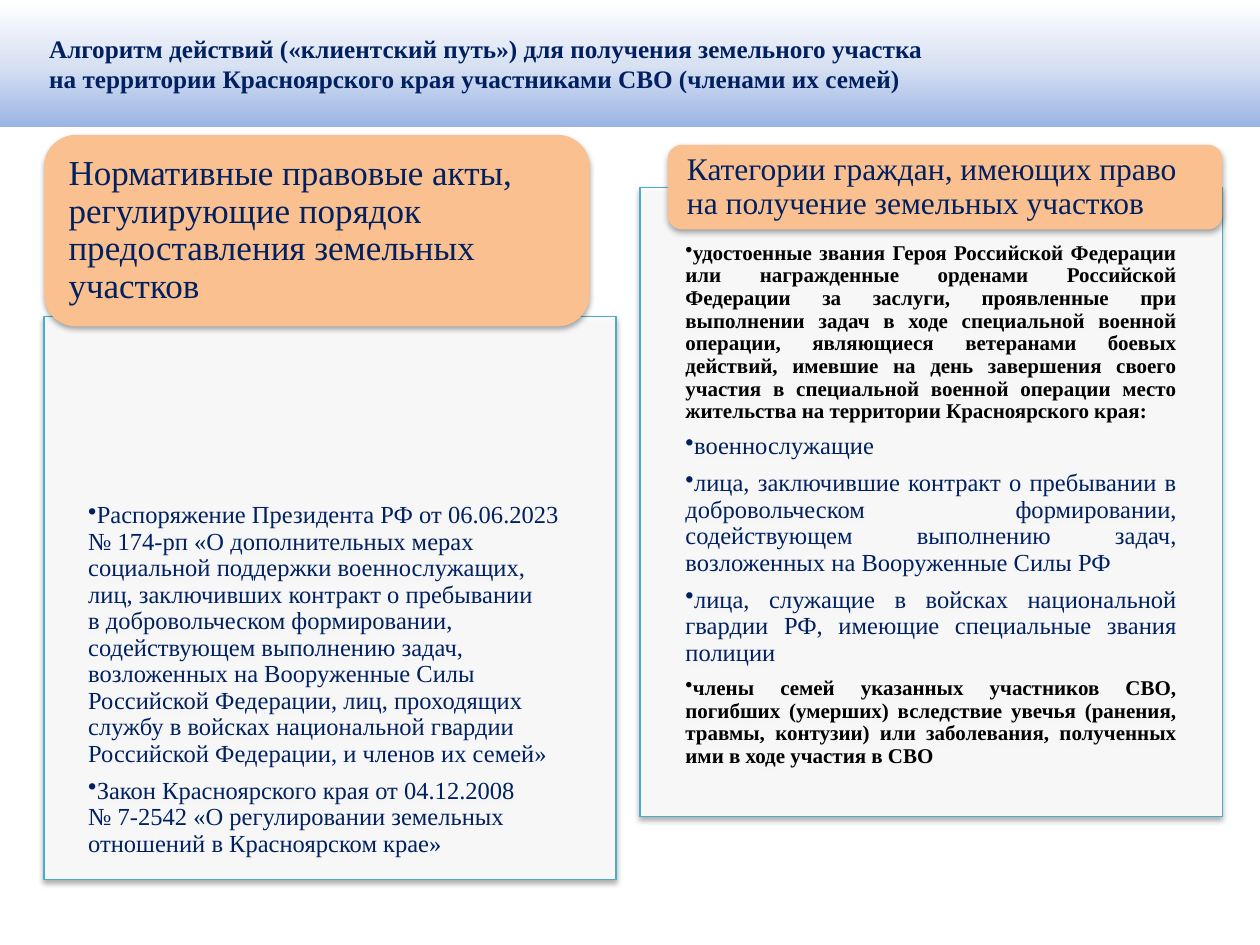
from copy import deepcopy

from lxml.etree import SubElement
from pptx import Presentation
from pptx.dml.color import RGBColor
from pptx.enum.shapes import MSO_SHAPE
from pptx.enum.text import MSO_ANCHOR, PP_ALIGN
from pptx.oxml.ns import qn
from pptx.util import Inches, Pt

THEME = {
    "font": "Times New Roman",
    "navy": "002060",
    "black": "000000",
    "panel": "FFFFFF",
    "panel_line": "4BACC6",
    "heading": "FAC090",
    "banner": [(0, "9AB5E4"), (0.5, "D9E2F3"), (1, "FFFFFF")],
    "title_size": 14.4,
    "item_size": 14,
    "summary_size": 12,
}

TITLE = (
    "Алгоритм действий («клиентский путь») для получения земельного участка\v"
    "на территории Красноярского края участниками СВО (членами их семей)"
)

SECTIONS = [
    {
        "heading": "Категории граждан, имеющих право на получение земельных участков",
        "heading_box": (5.3, 1.15, 4.4, 0.67),
        "heading_size": 18,
        "panel_box": (5.08, 1.49, 4.62, 4.99),
        "insets": (0.36, 0.43, 0.36, 0.09),
        "align": PP_ALIGN.JUSTIFY,
        "items": [
            ("summary", "удостоенные звания Героя Российской Федерации или награжденные "
             "орденами Российской Федерации за заслуги, проявленные при выполнении задач "
             "в ходе специальной военной операции, являющиеся ветеранами боевых действий, "
             "имевшие на день завершения своего участия в специальной военной операции "
             "место жительства на территории Красноярского края:"),
            ("item", "военнослужащие"),
            ("item", "лица, заключившие контракт о пребывании в добровольческом "
             "формировании, содействующем выполнению задач, возложенных на "
             "Вооруженные Силы РФ"),
            ("item", "лица, служащие в войсках национальной гвардии РФ, имеющие "
             "специальные звания полиции"),
            ("summary", "члены семей указанных участников СВО, погибших (умерших) "
             "вследствие увечья (ранения, травмы, контузии) или заболевания, "
             "полученных ими в ходе участия в СВО"),
        ],
    },
    {
        "heading": "Нормативные правовые акты, регулирующие порядок предоставления "
                   "земельных участков",
        "heading_box": (0.35, 1.07, 4.33, 1.52),
        "heading_size": 20,
        "panel_box": (0.35, 2.51, 4.54, 4.47),
        "insets": (0.35, 1.48, 0.35, 0.11),
        "align": PP_ALIGN.LEFT,
        "items": [
            ("item", "Распоряжение Президента РФ от 06.06.2023 № 174-рп "
             "«О дополнительных мерах социальной поддержки военнослужащих, лиц, "
             "заключивших контракт о пребывании\vв добровольческом формировании, "
             "содействующем выполнению задач, возложенных на Вооруженные Силы "
             "Российской Федерации, лиц, проходящих службу в войсках национальной "
             "гвардии Российской Федерации, и членов их семей»"),
            ("item", "Закон Красноярского края от 04.12.2008\v№ 7-2542 "
             "«О регулировании земельных отношений в Красноярском крае»"),
        ],
    },
]


def add_block(slide, preset, box, insets, anchor):
    block = slide.shapes.add_shape(preset, *map(Inches, box))
    block.shadow.inherit = False
    block.line.fill.background()
    frame = block.text_frame
    frame.word_wrap = True
    frame.vertical_anchor = anchor
    frame.margin_left, frame.margin_top, frame.margin_right, frame.margin_bottom = map(
        Inches, insets)
    return block


def paint(block, color):
    block.fill.solid()
    block.fill.fore_color.rgb = RGBColor.from_string(color)


def add_shadow(block):
    effects = block.element.spPr.find(qn("a:effectLst"))
    shadow = SubElement(effects, qn("a:outerShdw"), blurRad="40000", dist="23000",
                        dir="5400000", rotWithShape="0")
    tint = SubElement(shadow, qn("a:srgbClr"), val=THEME["black"])
    SubElement(tint, qn("a:alpha"), val="35000")


def style(paragraph, size, color, bold=False, align=PP_ALIGN.LEFT):
    paragraph.alignment = align
    for run in paragraph.runs:
        run.font.name = THEME["font"]
        run.font.size = Pt(size)
        run.font.bold = bold
        run.font.color.rgb = RGBColor.from_string(color)


def add_panel(slide, section):
    panel = add_block(slide, MSO_SHAPE.RECTANGLE, section["panel_box"],
                      section["insets"], MSO_ANCHOR.TOP)
    paint(panel, THEME["panel"])
    tint = panel.element.spPr.find(qn("a:solidFill")).find(qn("a:srgbClr"))
    SubElement(tint, qn("a:alpha"), val="90000")
    panel.line.color.rgb = RGBColor.from_string(THEME["panel_line"])
    panel.line.width = Pt(0.75)
    add_shadow(panel)

    frame = panel.text_frame
    frame.text = "\n".join(text for _, text in section["items"])
    for paragraph, (role, _) in zip(frame.paragraphs, section["items"]):
        summary = role == "summary"
        style(paragraph, THEME[f"{role}_size"], THEME["black" if summary else "navy"],
              summary, section["align"])
        paragraph.line_spacing = 0.9
        paragraph.space_after = Pt(6)
        properties = paragraph._p.get_or_add_pPr()
        properties.set("marL", "0")
        properties.set("indent", str(-Inches(0.12)))
        SubElement(properties, qn("a:buChar"), char="•")


def add_heading(slide, section):
    heading = add_block(slide, MSO_SHAPE.ROUNDED_RECTANGLE, section["heading_box"],
                        (0.12, 0, 0.12, 0), MSO_ANCHOR.MIDDLE)
    paint(heading, THEME["heading"])
    add_shadow(heading)
    heading.text_frame.text = section["heading"]
    paragraph = heading.text_frame.paragraphs[0]
    style(paragraph, section["heading_size"], THEME["navy"])
    paragraph.line_spacing = 0.9


def add_banner(slide):
    banner = add_block(slide, MSO_SHAPE.RECTANGLE, (0, 0, 10, 1.01),
                       (0.39, 0.05, 0.1, 0.05), MSO_ANCHOR.MIDDLE)
    banner.fill.gradient()
    banner.fill.gradient_angle = 90
    stops = banner.element.spPr.find(qn("a:gradFill")).find(qn("a:gsLst"))
    stops.append(deepcopy(stops[0]))
    for stop, (position, color) in zip(banner.fill.gradient_stops, THEME["banner"]):
        stop.position = position
        stop.color.rgb = RGBColor.from_string(color)
    banner.text_frame.text = TITLE
    style(banner.text_frame.paragraphs[0], THEME["title_size"], THEME["navy"], True)


def main():
    presentation = Presentation()
    presentation.slide_width = Inches(10)
    presentation.slide_height = Inches(7.5)
    slide = presentation.slides.add_slide(presentation.slide_layouts[6])
    for section in SECTIONS:
        add_panel(slide, section)
        add_heading(slide, section)
    add_banner(slide)
    presentation.save("out.pptx")


if __name__ == "__main__":
    main()
